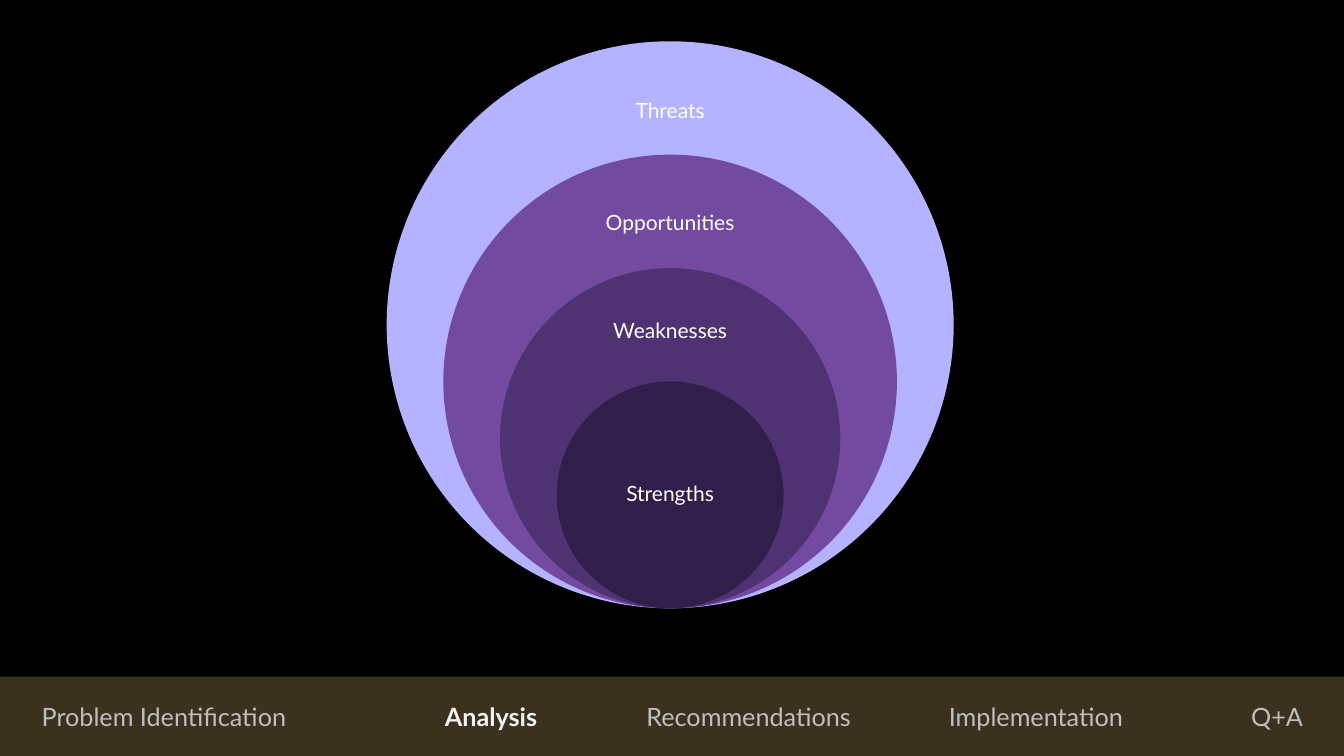
from lxml.etree import SubElement
from pptx import Presentation
from pptx.dml.color import RGBColor
from pptx.enum.shapes import MSO_SHAPE
from pptx.enum.text import MSO_ANCHOR, PP_ALIGN
from pptx.oxml.ns import qn
from pptx.util import Pt

COLORS = {
    "background": "000000", "bar": "B1985D", "label": "FFFFFF",
    "step": "BFBFBF", "current step": "F2F2F2",
    "threats": "B5B2FF", "opportunities": "724AA0",
    "weaknesses": "4F3272", "strengths": "321E4B",
}
FONT = "Lato"

# Circles from the outermost in: label, label centre below circle top, label height
CIRCLES = [
    ("Threats", 50.5, 60.5),
    ("Opportunities", 49, 58.5),
    ("Weaknesses", 45.5, 54.5),
    ("Strengths", 81, 81),
]
# Steps of the talk, each with its distance from the first in tab widths
STEPS = [
    ("Problem Identification", 0),
    ("Analysis", 4),
    ("Recommendations", 6),
    ("Implementation", 9),
    ("Q+A", 12),
]
CURRENT_STEP = "Analysis"

SLIDE_WIDTH, SLIDE_HEIGHT = 960, 540
CENTER_X, CIRCLES_BOTTOM = 478.7, 434.5
SMALLEST, GROWTH = 162, 81
LABEL_WIDTH, LABEL_INSET = 114, 8.6
BAR_LEFT, BAR_TOP, BAR_WIDTH = -23, 483.3, 1005
BAR_OPACITY = 33
STEPS_INSET, TAB_WIDTH = 50, 72


def rgb(name):
    return RGBColor.from_string(COLORS[name])


def style_font(font, size, color, bold=False):
    font.name, font.size, font.bold = FONT, Pt(size), bold
    font.color.rgb = rgb(color)


def add_filled(kind, left, top, width, height, color):
    shape = slide.shapes.add_shape(kind, Pt(left), Pt(top), Pt(width), Pt(height))
    shape.shadow.inherit = False
    shape.fill.solid()
    shape.fill.fore_color.rgb = rgb(color)
    shape.line.fill.background()
    return shape


prs = Presentation()
prs.slide_width, prs.slide_height = Pt(SLIDE_WIDTH), Pt(SLIDE_HEIGHT)
slide = prs.slides.add_slide(prs.slide_layouts[6])
slide.background.fill.solid()
slide.background.fill.fore_color.rgb = rgb("background")

# Translucent bar, its rounded ends running past the slide edges
bar = add_filled(MSO_SHAPE.ROUNDED_RECTANGLE, BAR_LEFT, BAR_TOP,
                 BAR_WIDTH, SLIDE_HEIGHT - BAR_TOP, "bar")
bar_color = bar.fill._xPr.find(qn("a:solidFill"))[0]
SubElement(bar_color, qn("a:alpha"), val=str(BAR_OPACITY * 1000))

# Steps on tab stops
steps_frame = bar.text_frame
steps_frame.margin_left, steps_frame.margin_right = Pt(STEPS_INSET), 0
steps_frame.vertical_anchor = MSO_ANCHOR.MIDDLE
steps_line = steps_frame.paragraphs[0]
steps_line.alignment = PP_ALIGN.LEFT
tab_list = SubElement(steps_line._p.get_or_add_pPr(), qn("a:tabLst"))
for step, tabs in STEPS:
    if tabs:
        SubElement(tab_list, qn("a:tab"), pos=str(Pt(tabs * TAB_WIDTH)), algn="l")
    step_run = steps_line.add_run()
    step_run.text = f"\t{step}" if tabs else step
    current = step == CURRENT_STEP
    style_font(step_run.font, 18, "current step" if current else "step", current)

# Nested circles sharing their lowest point, with labels
for index, (name, label_drop, label_height) in enumerate(CIRCLES):
    diameter = SMALLEST + GROWTH * (len(CIRCLES) - 1 - index)
    top = CIRCLES_BOTTOM - diameter
    add_filled(MSO_SHAPE.OVAL, CENTER_X - diameter / 2, top,
               diameter, diameter, name.lower())

    label = slide.shapes.add_textbox(
        Pt(CENTER_X - LABEL_WIDTH / 2), Pt(top + label_drop - label_height / 2),
        Pt(LABEL_WIDTH), Pt(label_height)).text_frame
    label.word_wrap = True
    label.vertical_anchor = MSO_ANCHOR.MIDDLE
    label.margin_left = label.margin_right = Pt(LABEL_INSET)
    label.margin_top = label.margin_bottom = Pt(LABEL_INSET)
    label.text = name
    label_line = label.paragraphs[0]
    label_line.alignment = PP_ALIGN.CENTER
    label_line.line_spacing = 0.9
    style_font(label_line.runs[0].font, 15, "label")

prs.save("out.pptx")
